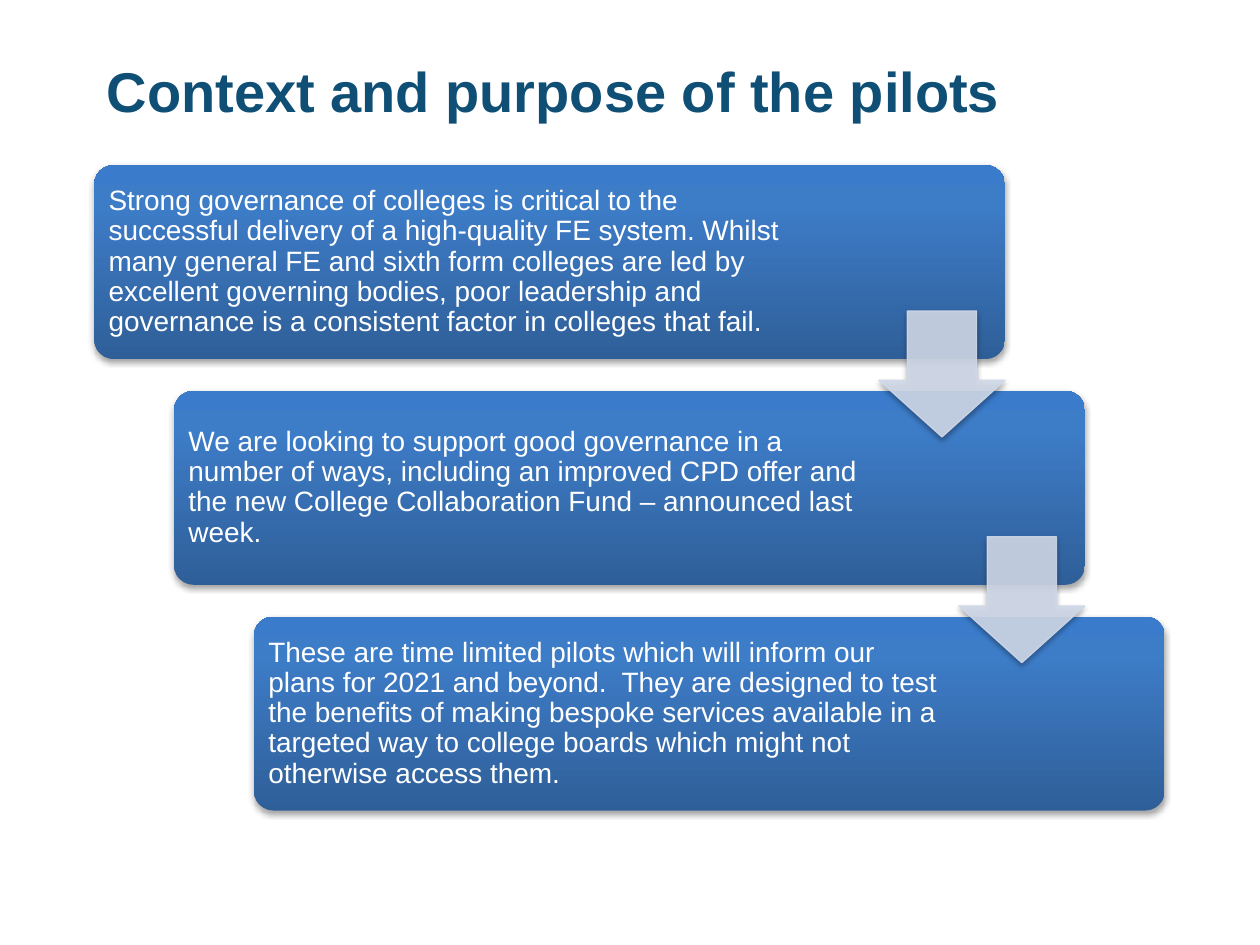
from pptx import Presentation
from pptx.dml.color import RGBColor
from pptx.enum.shapes import MSO_SHAPE as SHAPE
from pptx.enum.text import MSO_ANCHOR as ANCHOR
from pptx.oxml import parse_xml
from pptx.oxml.ns import nsdecls, qn
from pptx.util import Cm, Pt

FONT = "Arial"
LEFT, TOP, STEP_X, STEP_Y = 1.9, 3.33, 1.61, 4.55
BOX_W, BOX_H, ARROW, PAD = 18.36, 3.91, 2.54, 0.11
GRADIENT = [(0, "2F5F99"), (80, "3D7CC7"), (100, "3A7CCB")]
STEPS = [
    ("Strong governance of colleges is critical to the successful delivery of a "
     "high-quality FE system. Whilst many general FE and sixth form colleges are led by "
     "excellent governing bodies, poor leadership and governance is a consistent factor "
     "in colleges that fail.", 14.15),
    ("We are looking to support good governance in a number of ways, including an "
     "improved CPD offer and the new College Collaboration Fund – announced last week.",
     13.97),
    ("These are time limited pilots which will inform our plans for 2021 and beyond.  "
     "They are designed to test the benefits of making bespoke services available in a "
     "targeted way to college boards which might not otherwise access them.", 13.97),
]


def rgb(value):
    """Turn a hex string into a colour."""
    return RGBColor.from_string(value)


def add_shadow(sp):
    """Give a shape a soft shadow below it."""
    sp.shadow.inherit = False
    sp._element.spPr.find(qn("a:effectLst")).append(parse_xml(
        f'<a:outerShdw {nsdecls("a")} blurRad="40000" dist="23000" dir="5400000" '
        'rotWithShape="0"><a:srgbClr val="000000"><a:alpha val="35000"/></a:srgbClr>'
        '</a:outerShdw>'))


def add_text(slide, x, y, w, h, text, size, color, bold=False, inset=0.18, spacing=None):
    """Add a wrapped, vertically centred text box."""
    tf = slide.shapes.add_textbox(Cm(x), Cm(y), Cm(w), Cm(h)).text_frame
    tf.word_wrap = True
    tf.vertical_anchor = ANCHOR.MIDDLE
    tf.margin_left = tf.margin_right = tf.margin_top = tf.margin_bottom = Cm(inset)
    p = tf.paragraphs[0]
    p.line_spacing = spacing
    r = p.add_run()
    r.text = text
    r.font.name, r.font.size, r.font.bold = FONT, Pt(size), bold
    r.font.color.rgb = rgb(color)


def add_box(slide, x, y):
    """Add a rounded box with a vertical gradient."""
    sp = slide.shapes.add_shape(SHAPE.ROUNDED_RECTANGLE, Cm(x), Cm(y), Cm(BOX_W), Cm(BOX_H))
    sp.adjustments[0] = 0.1
    sp.line.fill.background()
    sp.fill.gradient()
    stops = "".join(f'<a:gs pos="{pos * 1000}"><a:srgbClr val="{color}"/></a:gs>'
                    for pos, color in GRADIENT)
    grad = sp._element.spPr.find(qn("a:gradFill"))
    grad.getparent().replace(grad, parse_xml(
        f'<a:gradFill {nsdecls("a")} rotWithShape="1"><a:gsLst>{stops}</a:gsLst>'
        '<a:lin ang="16200000" scaled="0"/></a:gradFill>'))
    add_shadow(sp)


def add_arrow(slide, x, y, color):
    """Add a slightly transparent down arrow."""
    sp = slide.shapes.add_shape(SHAPE.DOWN_ARROW, Cm(x), Cm(y), Cm(ARROW), Cm(ARROW))
    sp.adjustments[0], sp.adjustments[1] = 0.55, 0.45
    sp.fill.solid()
    sp.fill.fore_color.rgb = sp.line.color.rgb = rgb(color)
    sp.line.width = Pt(0.75)
    for clr in sp._element.spPr.iter(qn("a:srgbClr")):
        clr.append(parse_xml(f'<a:alpha {nsdecls("a")} val="90000"/>'))
    add_shadow(sp)


def main():
    """Build the slide and save it."""
    prs = Presentation()
    prs.slide_width, prs.slide_height = Cm(25.4), Cm(19.05)
    slide = prs.slides.add_slide(prs.slide_layouts[6])
    add_text(slide, LEFT, 0.91, 21.59, 1.8, "Context and purpose of the pilots",
             32, "104F75", bold=True, inset=0.25)
    corners = [(LEFT + i * STEP_X, TOP + i * STEP_Y) for i in range(len(STEPS))]
    for (x, y), (text, width) in zip(corners, STEPS):
        add_box(slide, x, y)
        add_text(slide, x + PAD, y + PAD, width, BOX_H - 2 * PAD, text,
                 16, "FFFFFF", spacing=0.9)
    for x, y in corners[:-1]:
        add_arrow(slide, x + BOX_W - ARROW, y + 2.94, "D0D8E8")
    prs.save("out.pptx")


if __name__ == "__main__":
    main()
